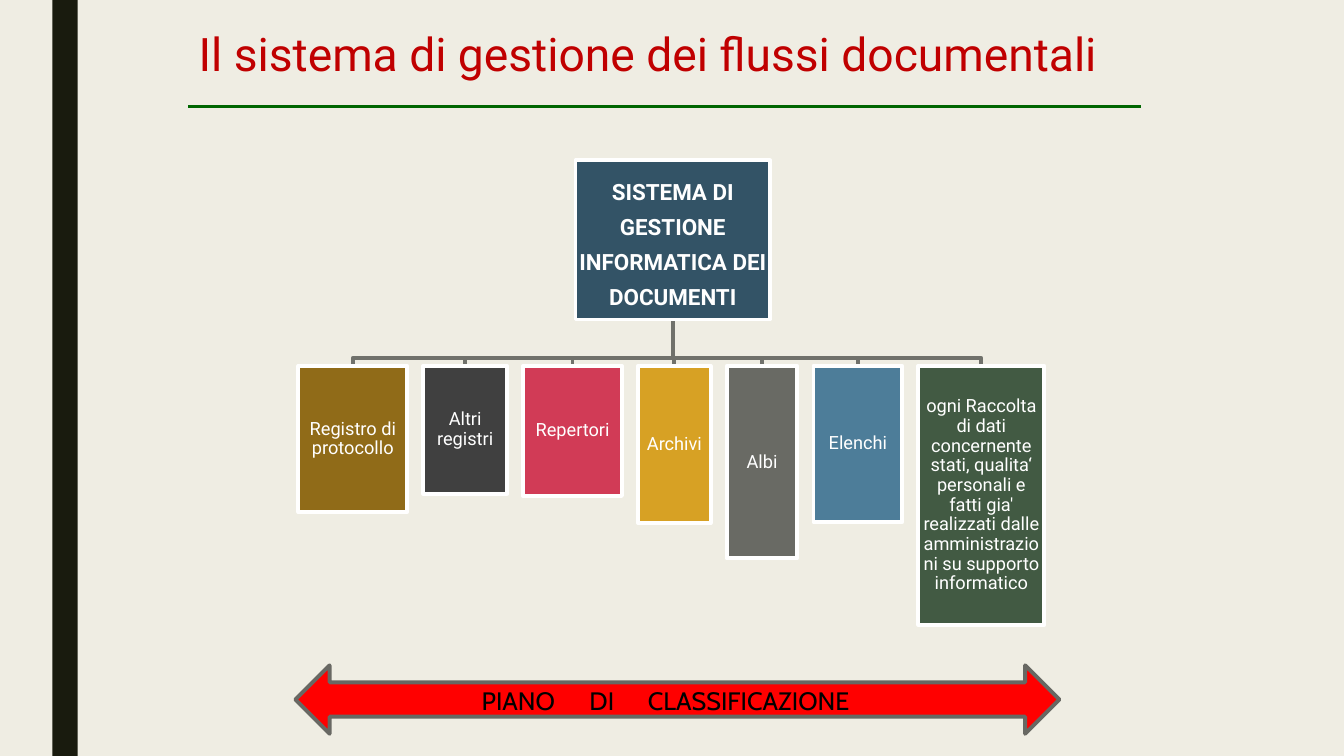
from lxml.etree import SubElement
from pptx import Presentation
from pptx.dml.color import RGBColor as RGB
from pptx.enum.shapes import MSO_CONNECTOR as LINK, MSO_SHAPE as SHAPE
from pptx.enum.text import MSO_ANCHOR as ANCHOR, MSO_AUTO_SIZE as FIT, PP_ALIGN as ALIGN
from pptx.oxml.ns import qn
from pptx.util import Inches, Pt

# Colours
PAPER = RGB(0xEF, 0xED, 0xE3)
INK = RGB(0x19, 0x1B, 0x0E)
TITLE = RGB(0xC0, 0x00, 0x00)
RULE = RGB(0x00, 0x66, 0x00)
WHITE = RGB(0xFF, 0xFF, 0xFF)
BLACK = RGB(0x00, 0x00, 0x00)
RED = RGB(0xFF, 0x00, 0x00)
EDGE = RGB(0x68, 0x68, 0x63)
BRANCH = RGB(0x70, 0x71, 0x6B)
NAVY = RGB(0x33, 0x53, 0x66)
BROWN = RGB(0x90, 0x6B, 0x18)
DARK = RGB(0x40, 0x40, 0x40)
ROSE = RGB(0xD1, 0x3B, 0x56)
GOLD = RGB(0xD7, 0xA1, 0x24)
GREY = RGB(0x69, 0x6A, 0x64)
BLUE = RGB(0x4D, 0x7D, 0x99)
GREEN = RGB(0x42, 0x5A, 0x43)

# Grid: square cells, 75 rows high
COLS, ROWS = 133.33, 75
LEAF_X, LEAF_Y, GAP = 29.6, 36.3, 1.6
BUS_Y = 35.5

# Leaves: text, width, height, fill
LEAVES = [
    ("Registro di protocollo", 10.8, 14.5, BROWN),
    ("Altri registri", 8.3, 12.7, DARK),
    ("Repertori", 9.8, 12.9, ROSE),
    ("Archivi", 7.2, 15.6, GOLD),
    ("Albi", 7, 19.1, GREY),
    ("Elenchi", 8.8, 15.5, BLUE),
    ("ogni Raccolta di dati concernente stati, qualita‘ personali e fatti gia' "
     "realizzati dalle amministrazioni su supporto informatico", 12.5, 25.7, GREEN),
]


def cell(*nums):
    """Turn grid counts into lengths."""
    return [Inches(num / 10) for num in nums]


def style(para, size, color, face="Roboto", bold=False):
    font = para.font
    font.size, font.name, font.bold = Pt(size), face, bold
    font.color.rgb = color


def add_form(slide, kind, area, fill, edge=None):
    form = slide.shapes.add_shape(kind, *cell(*area))
    form.shadow.inherit = False
    form.fill.solid()
    form.fill.fore_color.rgb = fill
    if edge is None:
        form.line.fill.background()
    else:
        form.line.color.rgb = edge
        form.line.width = Pt(2.75)
    return form


def add_box(slide, text, area, fill, size=13, space=0.9, bold=False):
    box = add_form(slide, SHAPE.RECTANGLE, area, fill, WHITE)
    frame = box.text_frame
    frame.word_wrap = True
    frame.vertical_anchor = ANCHOR.MIDDLE
    frame.margin_left = frame.margin_right = Inches(0.01)
    frame.margin_top = frame.margin_bottom = Inches(0.01)
    para = frame.paragraphs[0]
    para.text = text
    para.alignment = ALIGN.CENTER
    para.line_spacing = space
    style(para, size, WHITE, bold=bold)


def add_branch(slide, start, end):
    (left, top), (right, low) = start, end
    path = slide.shapes.build_freeform(*cell(left, top))
    path.add_line_segments(
        [cell(left, BUS_Y), cell(right, BUS_Y), cell(right, low)], close=False)
    branch = path.convert_to_shape()
    branch.shadow.inherit = False
    branch.fill.background()
    branch.line.color.rgb = BRANCH
    branch.line.width = Pt(2.75)


def add_title(slide, text):
    title = slide.shapes.title
    title.left, title.top, title.width, title.height = cell(18.7, 2.7, 104.4, 11.5)
    frame = title.text_frame
    frame.text = text
    frame.auto_size = FIT.NONE
    frame.vertical_anchor = ANCHOR.TOP
    para = frame.paragraphs[0]
    para.alignment = ALIGN.LEFT
    para.line_spacing = 0.89
    style(para, 33, TITLE)


def add_rule(slide):
    rule = slide.shapes.add_connector(LINK.STRAIGHT, *cell(18.7, 10.6, 113.2, 10.6))
    rule.line.color.rgb = RULE
    rule.line.width = Pt(2.25)
    SubElement(rule.element.spPr, qn("a:effectLst"))


def add_tree(slide):
    root = (57.1, 15.9, 19.3, 15.8)
    start = (root[0] + root[2] / 2, root[1] + root[3])
    lefts = [LEAF_X + sum(leaf[1] + GAP for leaf in LEAVES[:num])
             for num in range(len(LEAVES))]
    for left, leaf in zip(lefts, LEAVES):
        add_branch(slide, start, (left + leaf[1] / 2, LEAF_Y))
    add_box(slide, "SISTEMA DI GESTIONE INFORMATICA DEI DOCUMENTI",
            root, NAVY, size=16, space=1.3, bold=True)
    for left, (text, width, height, fill) in zip(lefts, LEAVES):
        add_box(slide, text, (left, LEAF_Y, width, height), fill)


def add_plan(slide):
    add_form(slide, SHAPE.LEFT_RIGHT_ARROW, (29.3, 66, 75.8, 6.8), RED, EDGE)
    label = slide.shapes.add_textbox(*cell(46.8, 67.5, 53, 4.1))
    label.text_frame.word_wrap = True
    para = label.text_frame.paragraphs[0]
    para.text = "PIANO\tDI\tCLASSIFICAZIONE"
    # Tab stops space the three words
    props = para._p.get_or_add_pPr()
    tabs = SubElement(props, qn("a:tabLst"))
    for stop in cell(10.7, 16.5):
        SubElement(tabs, qn("a:tab"), pos=str(stop), algn="l")
    style(para, 18, BLACK, "Cabin")


def main():
    deck = Presentation()
    deck.slide_width, deck.slide_height = cell(COLS, ROWS)
    slide = deck.slides.add_slide(deck.slide_layouts[5])
    back = slide.background.fill
    back.solid()
    back.fore_color.rgb = PAPER

    # Side bar and heading
    add_form(slide, SHAPE.RECTANGLE, (5.2, 0, 2.5, ROWS), INK)
    add_title(slide, "Il sistema di gestione dei flussi documentali")
    add_rule(slide)

    # Tree and the arrow below it
    add_tree(slide)
    add_plan(slide)
    deck.save("out.pptx")


if __name__ == "__main__":
    main()
